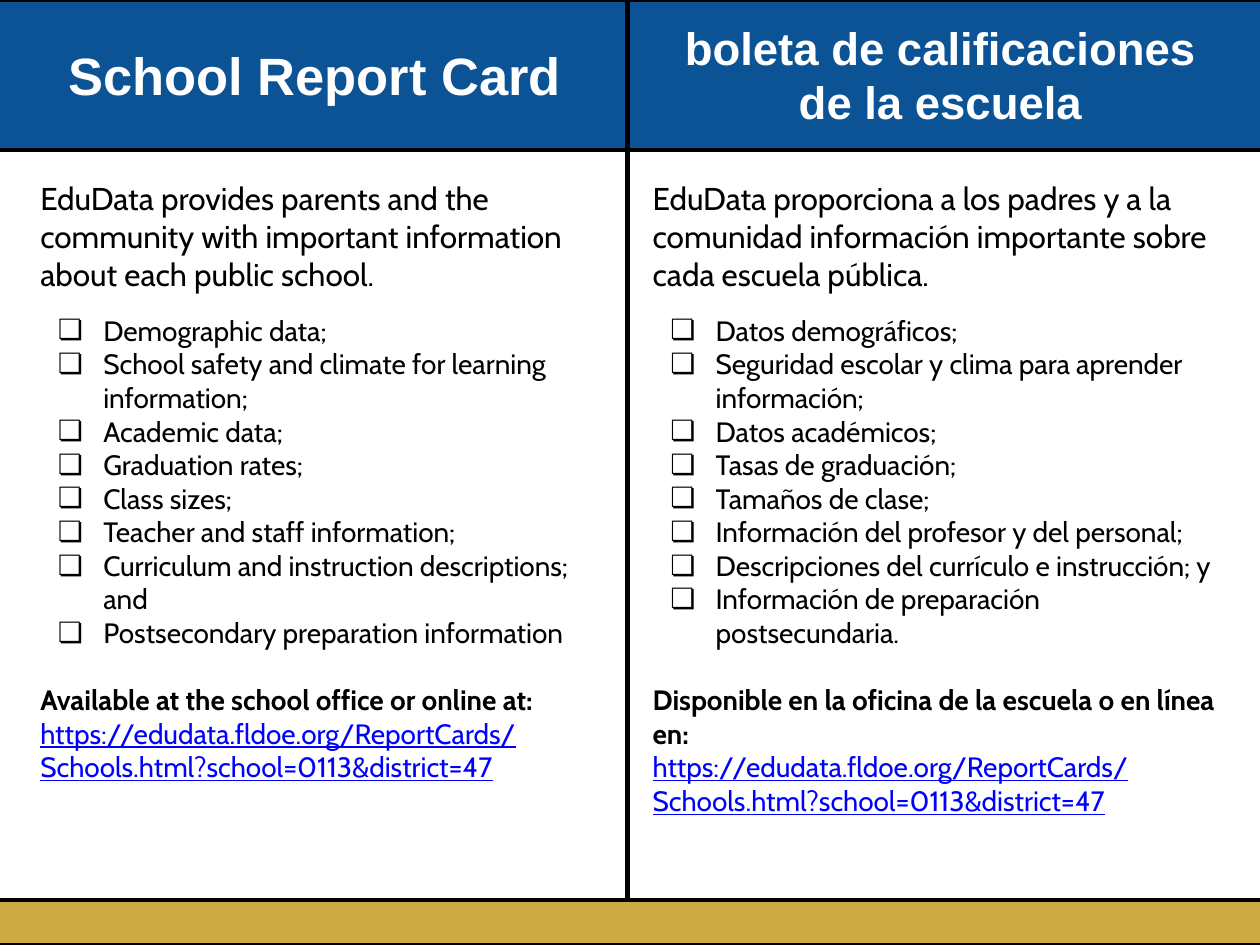
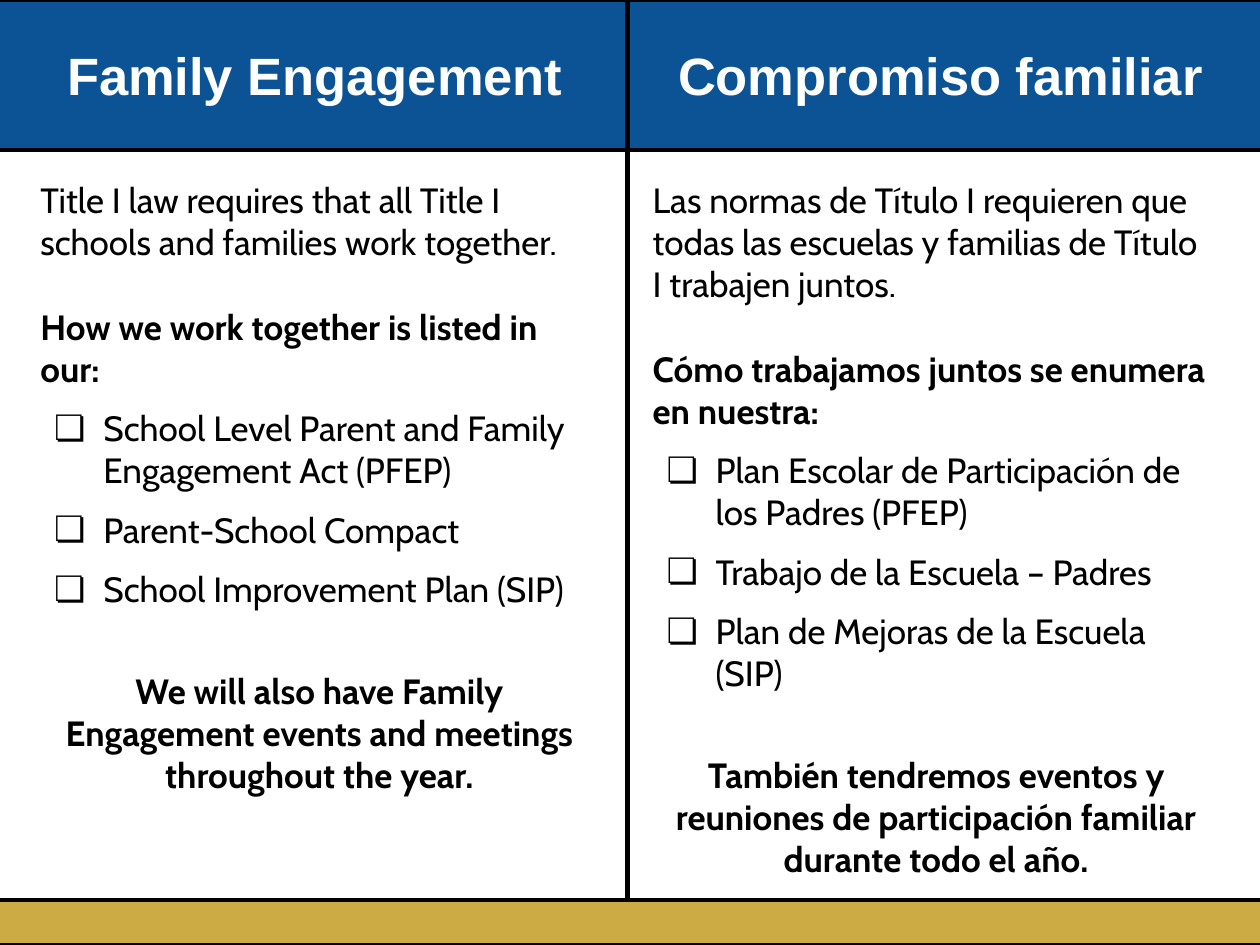
from copy import deepcopy
from dataclasses import dataclass
from typing import NamedTuple

from lxml.etree import SubElement
from pptx import Presentation
from pptx.dml.color import RGBColor
from pptx.enum.shapes import MSO_CONNECTOR, MSO_SHAPE
from pptx.enum.text import MSO_ANCHOR, MSO_AUTO_SIZE, PP_ALIGN
from pptx.oxml.ns import qn
from pptx.util import Inches, Pt


@dataclass(frozen=True)
class Theme:
    blue: RGBColor = RGBColor(0x0B, 0x53, 0x94)
    gold: RGBColor = RGBColor(0xCC, 0xAB, 0x45)
    black: RGBColor = RGBColor(0, 0, 0)
    white: RGBColor = RGBColor(0xFF, 0xFF, 0xFF)
    link: RGBColor = RGBColor(0, 0, 0xFF)
    heading_font: str = "Arial"
    body_font: str = "Cabin"
    heading_size: float = 30
    long_heading_size: float = 26
    large: float = 20
    intro: float = 18
    small: float = 16
    band_line: float = 2.25
    divider_line: float = 3
    bullet_gap: float = 10
    line_height: float = 1.2  # one line of body text, as a share of its size


THEME = Theme()

# The slide is a grid of 100 columns by 75 rows
SLIDE_WIDTH, SLIDE_HEIGHT = Inches(10), Inches(7.5)
COLUMN, ROW = SLIDE_WIDTH / 100, SLIDE_HEIGHT / 75


class Area(NamedTuple):
    left: float
    top: float
    width: float
    height: float

    def lengths(self) -> tuple[int, ...]:
        units = (COLUMN, ROW, COLUMN, ROW)
        return tuple(round(value * unit) for value, unit in zip(self, units))


HEADER_BAND = Area(-1.4, 0, 102.4, 11.9)
FOOTER_BAND = Area(-1.4, 71.4, 102.4, 3.6)
DIVIDER_COLUMN = 49.8
HEADING_AREAS = (Area(1.5, 2.1, 47, 7.6), Area(50.8, 2.1, 47.7, 7.6))
BODY_AREAS = (Area(2.2, 13.2, 46.3, 56.3), Area(50.8, 13.2, 47, 56.3))

# Placeholders of the Comparison layout
COMPARISON_LAYOUT = 4
HEADING_SLOTS, BODY_SLOTS, SPARE_SLOT = (0, 1), (2, 4), 3


@dataclass(frozen=True)
class Line:
    text: str
    size: float
    before: float = 0
    bold: bool = False
    centred: bool = False
    link: bool = False
    bullet_indent: float = 0


@dataclass(frozen=True)
class Panel:
    heading: str
    lines: list[Line]
    heading_size: float = THEME.heading_size


def report_panel(heading: str, heading_size: float, intro: str,
                 items: list[str], available: str) -> Panel:
    size = THEME.small
    first_gap = THEME.bullet_gap + 2
    bullets = [Line(item, size, 0 if number else first_gap, bullet_indent=0.36)
               for number, item in enumerate(items)]
    address = "https://edudata.fldoe.org/ReportCards/Schools.html?school=0113&district=47"
    return Panel(heading, [
        Line(intro, THEME.intro),
        *bullets,
        Line(available, size, size * THEME.line_height, bold=True),
        Line(address, size, link=True),
    ], heading_size)


def engagement_panel(heading: str, law: str, lead: str,
                     plans: list[str], events: str) -> Panel:
    size, gap = THEME.large, THEME.bullet_gap
    blank = size * THEME.line_height
    return Panel(heading, [
        Line(law, size),
        Line(lead, size, blank, bold=True),
        *[Line(plan, size, gap, bullet_indent=0.39) for plan in plans],
        Line(events, size, gap + blank, bold=True, centred=True),
    ])


SLIDES = [
    (
        report_panel(
            "School Report Card", THEME.heading_size,
            "EduData provides parents and the community with important "
            "information about each public school.",
            ["Demographic data;",
             "School safety and climate for learning information;",
             "Academic data;",
             "Graduation rates;",
             "Class sizes;",
             "Teacher and staff information;",
             "Curriculum and instruction descriptions; and",
             "Postsecondary preparation information"],
            "Available at the school office or online at:"),
        report_panel(
            "boleta de calificaciones de la escuela", THEME.long_heading_size,
            "EduData proporciona a los padres y a la comunidad información "
            "importante sobre cada escuela pública.",
            ["Datos demográficos;",
             "Seguridad escolar y clima para aprender información;",
             "Datos académicos;",
             "Tasas de graduación;",
             "Tamaños de clase;",
             "Información del profesor y del personal;",
             "Descripciones del currículo e instrucción; y",
             "Información de preparación postsecundaria."],
            "Disponible en la oficina de la escuela o en línea en:"),
    ),
    (
        engagement_panel(
            "Family Engagement",
            "Title I law requires that all Title I schools and families work together.",
            "How we work together is listed in our:",
            ["School Level Parent and Family Engagement Act (PFEP)",
             "Parent-School Compact",
             "School Improvement Plan (SIP)"],
            "We will also have Family Engagement events and meetings "
            "throughout the year."),
        engagement_panel(
            "Compromiso familiar",
            "Las normas de Título I requieren que todas las escuelas y familias "
            "de Título\vI trabajen juntos.",
            "Cómo trabajamos juntos se enumera en nuestra:",
            ["Plan Escolar de Participación de los Padres (PFEP)",
             "Trabajo de la Escuela – Padres",
             "Plan de Mejoras de la Escuela (SIP)"],
            "También tendremos eventos y reuniones de participación familiar "
            "durante todo el año."),
    ),
]


def add_band(page, area: Area, colour: RGBColor) -> None:
    band = page.shapes.add_shape(MSO_SHAPE.RECTANGLE, *area.lengths())
    band.shadow.inherit = False
    band.fill.solid()
    band.fill.fore_color.rgb = colour
    band.line.color.rgb = THEME.black
    band.line.width = Pt(THEME.band_line)


def add_divider(page) -> None:
    x = round(DIVIDER_COLUMN * COLUMN)
    bottom = round(FOOTER_BAND.top * ROW)
    divider = page.shapes.add_connector(MSO_CONNECTOR.STRAIGHT, x, 0, x, bottom)
    divider.line.color.rgb = THEME.black
    divider.line.width = Pt(THEME.divider_line)
    SubElement(divider.element.spPr, qn("a:effectLst"))


def place(box, area: Area, anchor: MSO_ANCHOR):
    """Move a placeholder to its area, in front of what is drawn so far."""
    box.left, box.top, box.width, box.height = area.lengths()
    box.element.getparent().append(box.element)
    frame = box.text_frame
    frame.word_wrap = True
    frame.auto_size = MSO_AUTO_SIZE.NONE
    frame.vertical_anchor = anchor
    frame.margin_left = frame.margin_right = Inches(0.1)
    frame.margin_top = frame.margin_bottom = Inches(0.1)
    return frame


def set_bullet(para, indent: float) -> None:
    properties = para._p.get_or_add_pPr()
    properties.set("marL", str(Inches(0.5) if indent else 0))
    properties.set("indent", str(-Inches(indent)))
    if not indent:
        SubElement(properties, qn("a:buNone"))
        return
    colour = SubElement(properties, qn("a:buClr"))
    SubElement(colour, qn("a:srgbClr"), val=str(THEME.black))
    SubElement(properties, qn("a:buFont"), typeface=THEME.body_font)
    SubElement(properties, qn("a:buChar"), char="❏")


def format_spans(para, font: str, size: float, colour: RGBColor,
                 bold: bool, underline: bool = False) -> None:
    for span in para.runs:
        span.font.name = font
        span.font.size = Pt(size)
        span.font.color.rgb = colour
        span.font.bold = bold
        span.font.underline = underline
    # Line breaks take the format of the text around them
    for line_break in para._p.findall(qn("a:br")):
        line_break.append(deepcopy(para.runs[0]._r.rPr))


def fill_heading(box, area: Area, panel: Panel) -> None:
    frame = place(box, area, MSO_ANCHOR.MIDDLE)
    frame.text = panel.heading
    para = frame.paragraphs[0]
    set_bullet(para, 0)
    para.alignment = PP_ALIGN.CENTER
    para.space_before = Pt(0)
    format_spans(para, THEME.heading_font, panel.heading_size, THEME.white, True)


def fill_body(box, area: Area, panel: Panel) -> None:
    frame = place(box, area, MSO_ANCHOR.TOP)
    box.fill.solid()
    box.fill.fore_color.rgb = THEME.white
    for number, line in enumerate(panel.lines):
        para = frame.add_paragraph() if number else frame.paragraphs[0]
        para.text = line.text
        set_bullet(para, line.bullet_indent)
        para.alignment = PP_ALIGN.CENTER if line.centred else PP_ALIGN.LEFT
        para.space_before = Pt(line.before)
        colour = THEME.link if line.link else THEME.black
        format_spans(para, THEME.body_font, line.size, colour, line.bold, line.link)


def add_page(deck, panels: tuple[Panel, Panel]) -> None:
    page = deck.slides.add_slide(deck.slide_layouts[COMPARISON_LAYOUT])
    slots = {box.placeholder_format.idx: box for box in page.placeholders}
    spare = slots[SPARE_SLOT].element
    spare.getparent().remove(spare)

    add_band(page, HEADER_BAND, THEME.blue)
    for side, panel in enumerate(panels):
        fill_heading(slots[HEADING_SLOTS[side]], HEADING_AREAS[side], panel)
        fill_body(slots[BODY_SLOTS[side]], BODY_AREAS[side], panel)
    add_divider(page)
    add_band(page, FOOTER_BAND, THEME.gold)


def main() -> None:
    deck = Presentation()
    deck.slide_width, deck.slide_height = SLIDE_WIDTH, SLIDE_HEIGHT
    for panels in SLIDES:
        add_page(deck, panels)
    deck.save("out.pptx")


if __name__ == "__main__":
    main()
